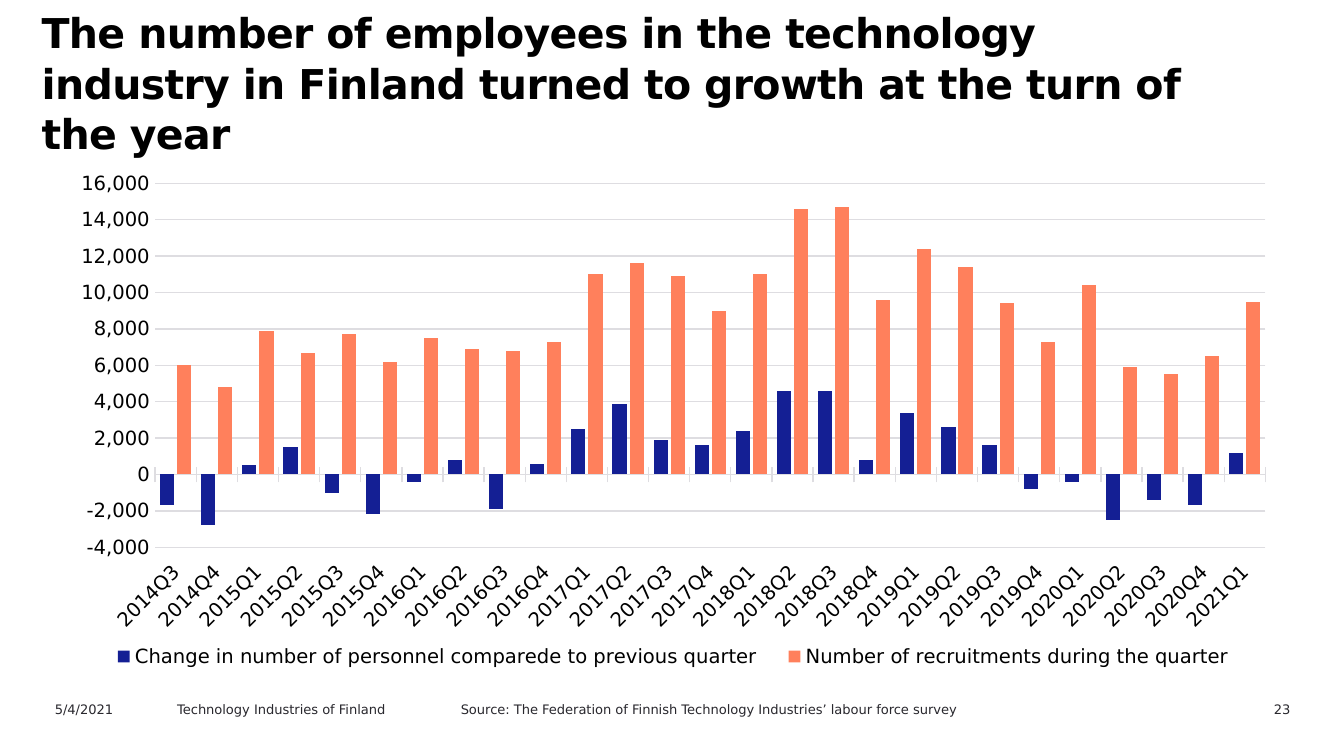
import lxml.etree
import pptx
import pptx.util
import pptx.chart.data
import pptx.dml.color
import pptx.enum.chart
import pptx.enum.text
import pptx.oxml.ns

Pt = pptx.util.Pt
enum = pptx.enum.chart
text = pptx.enum.text
qn = pptx.oxml.ns.qn

title = ("The number of employees in the technology industry in Finland "
         "turned to growth at the turn of the year")
notes = [
    ("23", 87.6, 9.4, "RIGHT"),
    ("5/4/2021", 3.1, 10, "LEFT"),
    ("Technology Industries of Finland", 12.2, 19.4, "LEFT"),
    ("Source: The Federation of Finnish Technology Industries’ labour force survey",
     33.3, 41.1, "LEFT"),
]
first, count = (2014, 3), 27
series = [
    ("Change in number of personnel comparede to previous quarter", "blue",
     [-1700, -2800, 500, 1500, -1000, -2200, -400, 800, -1900, 600, 2500, 3900,
      1900, 1600, 2400, 4600, 4600, 800, 3400, 2600, 1600, -800, -400, -2500,
      -1400, -1700, 1200]),
    ("Number of recruitments during the quarter", "coral",
     [6000, 4800, 7900, 6700, 7700, 6200, 7500, 6900, 6800, 7300, 11000, 11600,
      10900, 9000, 11000, 14600, 14700, 9600, 12400, 11400, 9400, 7300, 10400,
      5900, 5500, 6500, 9500]),
]

theme = {
    "face": "DejaVu Sans",
    "size": {"title": 22, "chart": 10.5, "note": 7},
    "color": {"black": "000000", "gray": "29282E", "grid": "DEDDE1",
              "blue": "141F94", "coral": "FF805C"},
}

deck = pptx.Presentation()
deck.slide_width = pptx.util.Inches(10)
deck.slide_height = deck.slide_width * 9 // 16
col, row = deck.slide_width / 100, deck.slide_height / 100


def apply(item, **values):
    for key, value in values.items():
        setattr(item, key, value)


def place(x, y, w, h):
    return [round(n) for n in (x * col, y * row, w * col, h * row)]


def tint(name):
    return pptx.dml.color.RGBColor.from_string(theme["color"][name])


def style(font, size, color, bold=False):
    apply(font, name=theme["face"], size=Pt(theme["size"][size]), bold=bold)
    font.color.rgb = tint(color)


def rule(line):
    line.color.rgb = tint("grid")
    line.width = Pt(0.75)


def write(box, words, size, color, align="LEFT", bold=False):
    frame = box.text_frame
    apply(frame, text=words, word_wrap=True, auto_size=text.MSO_AUTO_SIZE.NONE,
          vertical_anchor=text.MSO_ANCHOR.TOP)
    par = frame.paragraphs[0]
    par.alignment = getattr(text.PP_ALIGN, align)
    style(par.runs[0].font, size, color, bold)
    return par


def arrange(part, index, target, **shares):
    for old in part.findall(qn("c:layout")):
        part.remove(old)
    layout = lxml.etree.Element(qn("c:layout"))
    manual = lxml.etree.SubElement(layout, qn("c:manualLayout"))
    values = {"xMode": "edge", "yMode": "edge", **shares}
    if target:
        values = {"layoutTarget": target, **values}
    for key, value in values.items():
        lxml.etree.SubElement(manual, qn("c:" + key)).set("val", str(value))
    part.insert(index, layout)


slide = deck.slides.add_slide(deck.slide_layouts[5])
head = slide.shapes.title
apply(head, **dict(zip(("left", "top", "width", "height"), place(2, 0, 87.4, 12.6))))
par = write(head, title, "title", "black", bold=True)
par.line_spacing = Pt(27)
par.runs[0].font._element.set("spc", "-33")
par._p.get_or_add_pPr().set("marL", str(pptx.util.Inches(0.01)))

for words, x, w, align in notes:
    box = slide.shapes.add_textbox(*place(x, 91.9, w, 3.2))
    write(box, words, "note", "gray", align)

data = pptx.chart.data.CategoryChartData(number_format="#,##0")
start = first[0] * 4 + first[1] - 1
data.categories = [f"{n // 4}Q{n % 4 + 1}" for n in range(start, start + count)]
for name, color, vals in series:
    data.add_series(name, vals)

chart = slide.shapes.add_chart(
    enum.XL_CHART_TYPE.COLUMN_CLUSTERED, *place(4.2, 21.5, 91.8, 68.8), data).chart
style(chart.font, "chart", "black")
apply(chart, has_title=False, has_legend=True)
apply(chart.legend, position=enum.XL_LEGEND_POSITION.BOTTOM, include_in_layout=False)
style(chart.legend.font, "chart", "black")

plot = chart.plots[0]
apply(plot, gap_width=70, overlap=-21, vary_by_categories=False)
for bar, (name, color, vals) in zip(plot.series, series):
    bar.invert_if_negative = False
    bar.format.fill.solid()
    bar.format.fill.fore_color.rgb = tint(color)

cat, val = chart.category_axis, chart.value_axis
mark = enum.XL_TICK_MARK
apply(cat, major_tick_mark=mark.CROSS, minor_tick_mark=mark.NONE,
      tick_label_position=enum.XL_TICK_LABEL_POSITION.LOW)
apply(val, major_tick_mark=mark.NONE, minor_tick_mark=mark.NONE,
      minimum_scale=-4000, maximum_scale=16000, major_unit=2000,
      has_major_gridlines=True)
apply(val.tick_labels, number_format="#,##0", number_format_is_linked=False)
for axis in (cat, val):
    style(axis.tick_labels.font, "chart", "black")
cat._element.txPr.bodyPr.set("rot", "-2700000")
rule(cat.format.line)
rule(val.major_gridlines.format.line)
val.format.line.fill.background()

arrange(cat._element.getparent(), 0, "inner", x=0.08, y=0.04, w=0.9, h=0.7)
arrange(chart.legend._element, 1, None, x=0.03, y=0.92, w=0.94, h=0.06)

deck.save("out.pptx")
